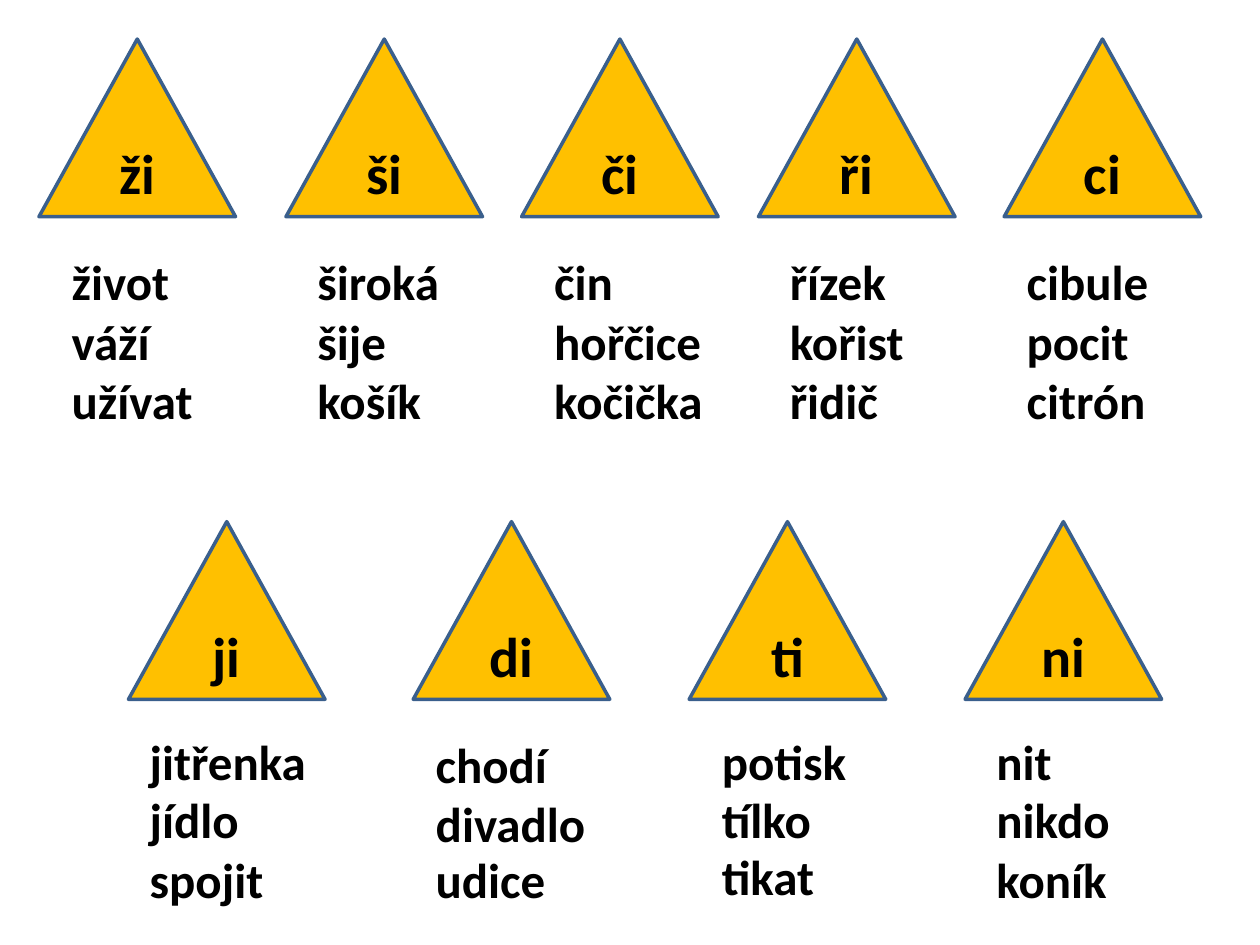
from pptx import Presentation
from pptx.dml.color import RGBColor
from pptx.enum.shapes import MSO_SHAPE as Shape
from pptx.enum.text import MSO_ANCHOR as Anchor, MSO_AUTO_SIZE as Fit, PP_ALIGN as Align
from pptx.util import Inches, Pt

COLORS = {"fill": "FFC000", "line": "3A5F8C", "text": "000000"}
HIGH = (1.95, 2.42, 2.89)
LOW = (5.76, 6.22, 6.69)

TOP_ROW = [
    (0.31, "ži", 0.47, HIGH, [("život", 1.25), ("váží", 1.41), ("užívat", 1.41)]),
    (2.27, "ši", 2.42, HIGH, [("široká", 1.33), ("šije", 1.41), ("košík", 1.25)]),
    (4.14, "či", 4.3, HIGH, [("čin", 1.25), ("hořčice", 1.48), ("kočička", 1.64)]),
    (6.02, "ři", 6.17, HIGH, [("řízek", 1.33), ("kořist", 1.48), ("řidič", 1.56)]),
    (7.97, "ci", 8.05, HIGH, [("cibule", 1.33), ("pocit", 1.56), ("citrón", 1.41)]),
]
LOW_ROW = [
    (1.02, "ji", 1.09, LOW, [("jitřenka", 1.56), ("jídlo", 1.56), ("spojit", 1.64)]),
    (3.28, "di", 3.36, (5.78, 6.25, 6.69),
     [("chodí", 1.33), ("divadlo", 1.48), ("udice", 1.33)]),
    (5.47, "ti", 5.63, (5.76, 6.22, 6.67),
     [("potisk", 1.41), ("tílko", 1.48), ("tikat", 1.48)]),
    (7.66, "ni", 7.81, LOW, [("nit", 1.56), ("nikdo", 1.56), ("koník", 1.88)]),
]


def color(name):
    return RGBColor.from_string(COLORS[name])


def write(frame, text, size, align):
    frame.text = text
    frame.word_wrap = True
    para = frame.paragraphs[0]
    para.alignment = align
    font = para.runs[0].font
    font.name = "Calibri"
    font.size = Pt(size)
    font.bold = True
    font.color.rgb = color("text")


def add_sign(slide, left, top, width, height, text):
    sign = slide.shapes.add_shape(
        Shape.ISOSCELES_TRIANGLE, Inches(left), Inches(top), Inches(width), Inches(height))
    sign.shadow.inherit = False
    sign.fill.solid()
    sign.fill.fore_color.rgb = color("fill")
    sign.line.color.rgb = color("line")
    sign.line.width = Pt(2)
    sign.text_frame.vertical_anchor = Anchor.MIDDLE
    write(sign.text_frame, text, 32, Align.CENTER)


def add_words(slide, left, tops, words):
    for top, (word, width) in zip(tops, words):
        box = slide.shapes.add_textbox(
            Inches(left), Inches(top), Inches(width), Inches(0.57))
        write(box.text_frame, word, 28, Align.LEFT)
        box.text_frame.auto_size = Fit.SHAPE_TO_FIT_TEXT


def add_row(slide, top, groups):
    for left, sound, edge, tops, words in groups:
        add_sign(slide, left, top, 1.56, 1.41, sound)
        add_words(slide, edge, tops, words)


def main():
    deck = Presentation()
    deck.slide_width = Inches(10)
    deck.slide_height = Inches(7.5)
    slide = deck.slides.add_slide(deck.slide_layouts[6])
    add_row(slide, 0.31, TOP_ROW)
    add_row(slide, 4.14, LOW_ROW)
    deck.save("out.pptx")


if __name__ == "__main__":
    main()
